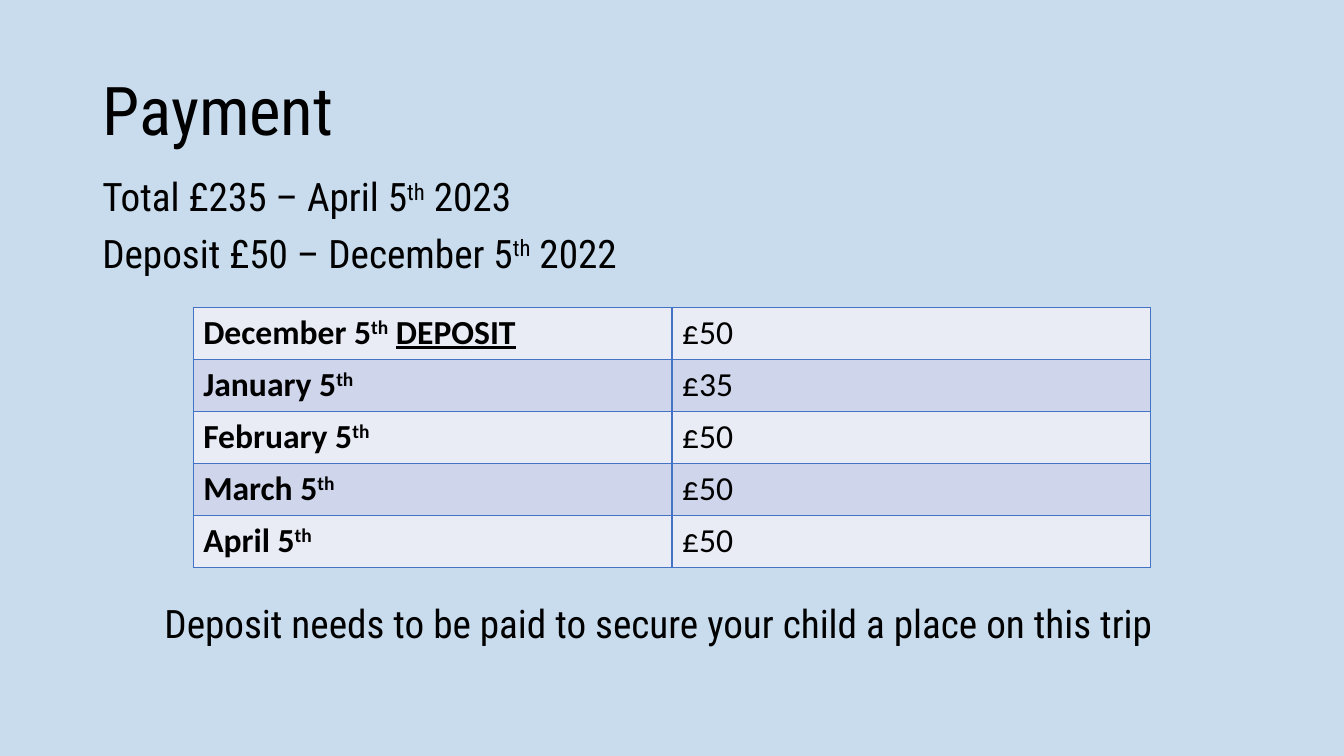
from dataclasses import dataclass

from lxml.etree import SubElement as Sub
from pptx import Presentation
from pptx.dml.color import RGBColor as RGB
from pptx.enum.text import MSO_ANCHOR as Anchor, MSO_AUTO_SIZE as Fit, PP_ALIGN as Align
from pptx.oxml.ns import qn
from pptx.util import Emu, Inches, Pt

SKY = RGB(0xC8, 0xDC, 0xEE)
BLACK = RGB(0, 0, 0)
PALE = RGB(0xE9, 0xEB, 0xF5)
LILAC = RGB(0xCF, 0xD5, 0xEA)
BLUE = RGB(0x44, 0x72, 0xC4)
HEAD, BODY = "Roboto Condensed", "Calibri"

# The slide is a grid of 160 columns by 90 rows
WIDE, HIGH = Inches(13.333), Inches(7.5)
COLS, ROWS = 160, 90


@dataclass
class Box:
    left: float
    top: float
    width: float
    height: float

    def place(self) -> tuple[Emu, Emu, Emu, Emu]:
        return (Emu(int(WIDE * self.left / COLS)), Emu(int(HIGH * self.top / ROWS)),
                Emu(int(WIDE * self.width / COLS)), Emu(int(HIGH * self.height / ROWS)))


@dataclass
class Bit:
    text: str
    sup: bool = False
    under: bool = False


@dataclass
class Due:
    date: list[Bit]
    sum: str


@dataclass
class Style:
    face: str
    size: int
    bold: bool = False


def write(par, bits: list[Bit], style: Style) -> None:
    for bit in bits:
        run = par.add_run()
        run.text = bit.text
        font = run.font
        font.name, font.size, font.bold = style.face, Pt(style.size), style.bold
        font.color.rgb = BLACK
        if bit.under:
            font.underline = True
        if bit.sup:
            run._r.get_or_add_rPr().set("baseline", "30000")


def edge(cell) -> None:
    """Draw a thin line on all four sides; lines come before the fill."""
    props = cell._tc.get_or_add_tcPr()
    for spot, side in enumerate(("lnL", "lnR", "lnT", "lnB")):
        line = Sub(props, qn(f"a:{side}"), w=str(Pt(1)))
        Sub(Sub(line, qn("a:solidFill")), qn("a:srgbClr"), val=str(BLUE))
        props.insert(spot, line)


def fill(cell, bits: list[Bit], style: Style, color: RGB) -> None:
    cell.fill.solid()
    cell.fill.fore_color.rgb = color
    edge(cell)
    write(cell.text_frame.paragraphs[0], bits, style)


def note(slide, box: Box, lines: list[list[Bit]], space: float, gap: int) -> None:
    frame = slide.shapes.add_textbox(*box.place()).text_frame
    frame.word_wrap = True
    for num, bits in enumerate(lines):
        par = frame.add_paragraph() if num else frame.paragraphs[0]
        par.line_spacing, par.space_before = space, Pt(gap)
        write(par, bits, Style(HEAD, 28))


def chart_dues(slide, box: Box, dues: list[Due]) -> None:
    table = slide.shapes.add_table(len(dues), 2, *box.place()).table
    table.first_row = table.horz_banding = False
    for num, due in enumerate(dues):
        color = LILAC if num % 2 else PALE
        fill(table.cell(num, 0), due.date, Style(BODY, 24, True), color)
        fill(table.cell(num, 1), [Bit(due.sum)], Style(BODY, 24), color)


def day(month: str, *rest: Bit) -> list[Bit]:
    return [Bit(f"{month} 5"), Bit("th", sup=True), *rest]


TERMS = [day("Total £235 – April", Bit(" 2023")),
         day("Deposit £50 – December", Bit(" 2022"))]
DUES = [Due(day("December", Bit(" "), Bit("DEPOSIT", under=True)), "£50"),
        Due(day("January"), "£35"),
        Due(day("February"), "£50"),
        Due(day("March"), "£50"),
        Due(day("April"), "£50")]
CLOSE = [[Bit("Deposit needs to be paid to secure your child a place on this trip")]]


def main() -> None:
    deck = Presentation()
    deck.slide_width, deck.slide_height = WIDE, HIGH
    slide = deck.slides.add_slide(deck.slide_layouts[5])
    slide.background.fill.solid()
    slide.background.fill.fore_color.rgb = SKY

    # Title
    title = slide.shapes.title
    title.left, title.top, title.width, title.height = Box(11, 4.8, 138, 17.4).place()
    frame = title.text_frame
    frame.auto_size, frame.vertical_anchor = Fit.NONE, Anchor.MIDDLE
    par = frame.paragraphs[0]
    par.alignment, par.line_spacing = Align.LEFT, 0.9
    write(par, [Bit("Payment")], Style(HEAD, 48))

    # Terms, table of dues, closing line
    note(slide, Box(11, 20.6, 72.2, 16), TERMS, 0.9, 10)
    chart_dues(slide, Box(23, 36.6, 114, 31), DUES)
    note(slide, Box(18.4, 70.8, 125.9, 6.9), CLOSE, 1.0, 0)

    deck.save("out.pptx")


if __name__ == "__main__":
    main()
